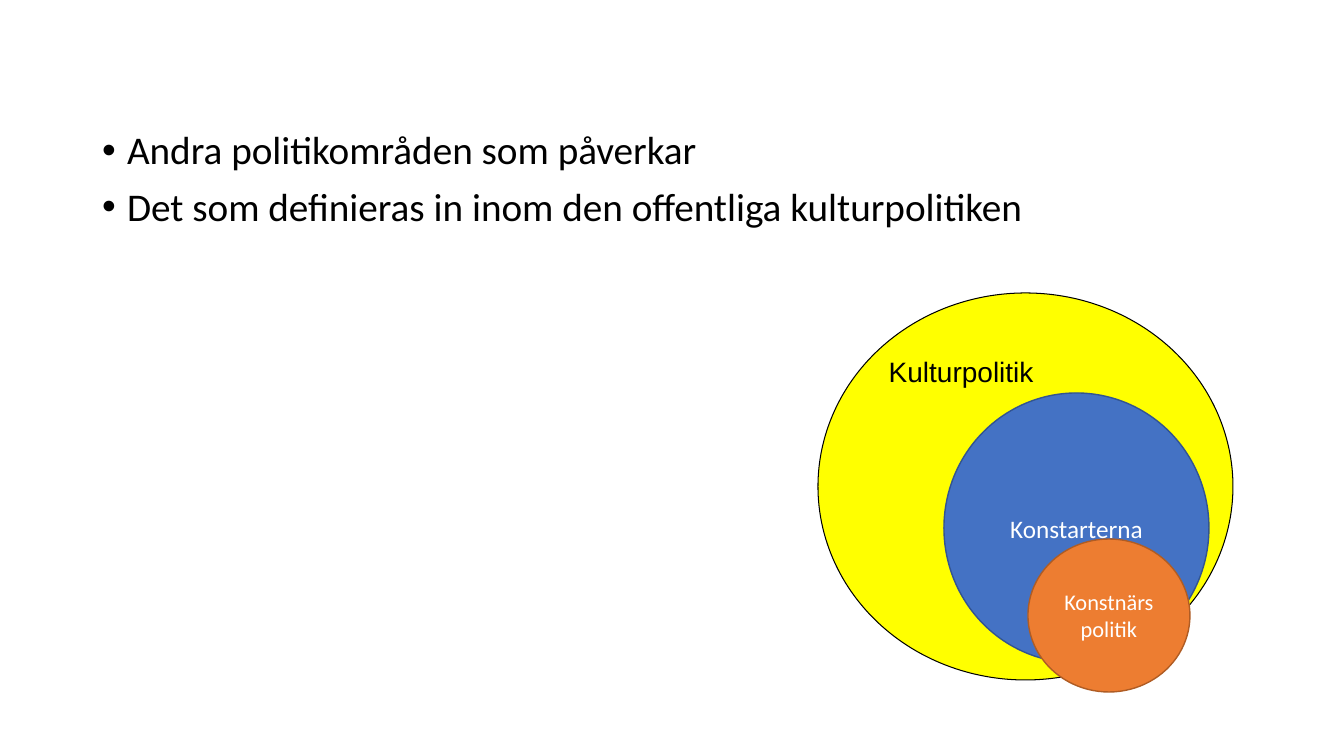
from dataclasses import dataclass

from pptx import Presentation
from pptx.dml.color import RGBColor
from pptx.enum.shapes import MSO_SHAPE
from pptx.enum.text import MSO_ANCHOR, MSO_AUTO_SIZE, PP_ALIGN
from pptx.util import Emu, Pt

OVAL = MSO_SHAPE.OVAL
TOP, MIDDLE = MSO_ANCHOR.TOP, MSO_ANCHOR.MIDDLE
LEFT, CENTER = PP_ALIGN.LEFT, PP_ALIGN.CENTER
NO_FIT = MSO_AUTO_SIZE.NONE

BLACK = RGBColor(0x00, 0x00, 0x00)
WHITE = RGBColor(0xFF, 0xFF, 0xFF)
YELLOW = RGBColor(0xFF, 0xFF, 0x00)
BLUE = RGBColor(0x44, 0x72, 0xC4)
DARK_BLUE = RGBColor(0x32, 0x54, 0x91)
ORANGE = RGBColor(0xED, 0x7D, 0x31)
DARK_ORANGE = RGBColor(0xAF, 0x5C, 0x24)

PX_PER_INCH = 100.8
BULLET_INDENT = 25


@dataclass(frozen=True)
class Circle:
    """A labelled policy area, with its box in px."""
    text: str
    box: tuple[int, int, int, int]
    fill: RGBColor
    line: RGBColor
    size: int
    color: RGBColor = WHITE
    font: str = "Calibri"
    weight: float = 1
    anchor: MSO_ANCHOR = MIDDLE
    align: PP_ALIGN = CENTER


BULLETS = (
    "Andra politikområden som påverkar",
    "Det som definieras in inom den offentliga kulturpolitiken",
)
CIRCLES = (
    Circle("Kulturpolitik", (818, 293, 415, 387), YELLOW, BLACK, 20,
           BLACK, "Arial", 0.75, TOP, LEFT),
    Circle("Konstarterna", (944, 393, 265, 270), BLUE, DARK_BLUE, 18),
    Circle("Konstnärspolitik", (1028, 539, 162, 153), ORANGE, DARK_ORANGE, 16),
)


def px(n: int) -> Emu:
    """Turn px into EMU."""
    return Emu(round(n * 914400 / PX_PER_INCH))


def add_run(p, text: str, font: str, size: int, color: RGBColor) -> None:
    """Add one formatted run to a paragraph."""
    r = p.add_run()
    r.text = text
    r.font.name = font
    r.font.size = Pt(size)
    r.font.color.rgb = color


def fill_body(sp, bullets: tuple[str, ...]) -> None:
    """Place the body placeholder and write its bullet list."""
    sp.left, sp.top, sp.width, sp.height = map(px, (92, 126, 1159, 555))
    tf = sp.text_frame
    tf.auto_size = NO_FIT
    tf.vertical_anchor = TOP
    for i, text in enumerate(bullets):
        p = tf.add_paragraph() if i else tf.paragraphs[0]
        p.line_spacing = 0.9
        p.space_before = Pt(10 if i else 0)
        pPr = p._p.get_or_add_pPr()
        pPr.set("marL", str(px(BULLET_INDENT)))
        pPr.set("indent", str(-px(BULLET_INDENT)))
        add_run(p, text, "Calibri", 28, BLACK)


def add_circle(s, circle: Circle) -> None:
    """Draw one labelled ellipse."""
    sp = s.shapes.add_shape(OVAL, *map(px, circle.box))
    sp.shadow.inherit = False
    sp.fill.solid()
    sp.fill.fore_color.rgb = circle.fill
    sp.line.color.rgb = circle.line
    sp.line.width = Pt(circle.weight)
    tf = sp.text_frame
    tf.word_wrap = True
    tf.vertical_anchor = circle.anchor
    p = tf.paragraphs[0]
    p.alignment = circle.align
    add_run(p, circle.text, circle.font, circle.size, circle.color)


def main() -> None:
    """Build and save the slide."""
    prs = Presentation()
    prs.slide_width, prs.slide_height = px(1344), px(756)
    s = prs.slides.add_slide(prs.slide_layouts[1])
    title = s.shapes.title
    title.element.getparent().remove(title.element)
    fill_body(s.placeholders[1], BULLETS)
    for circle in CIRCLES:
        add_circle(s, circle)
    prs.save("out.pptx")


if __name__ == "__main__":
    main()
